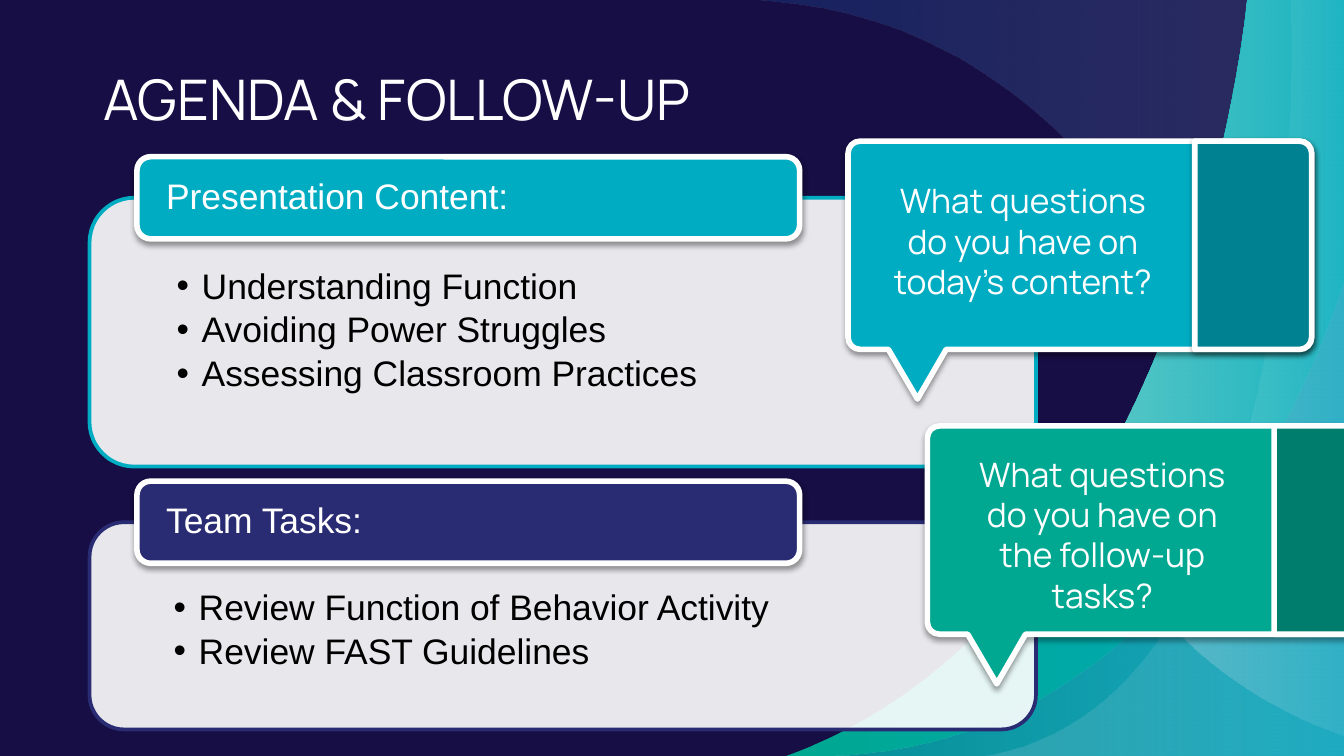
from lxml import etree
from pptx import Presentation
from pptx.dml.color import RGBColor
from pptx.enum import shapes, text
from pptx.oxml import ns
from pptx.util import Pt

NAVY = RGBColor(0x16, 0x0E, 0x44)
INK = RGBColor(0x12, 0x10, 0x2F)
INDIGO = RGBColor(0x29, 0x2C, 0x73)
TEAL = RGBColor(0x00, 0xAC, 0xC2)
DEEP = RGBColor(0x00, 0x81, 0x92)
GREEN = RGBColor(0x00, 0xA7, 0x91)
MOSS = RGBColor(0x00, 0x7D, 0x6D)
SKY = RGBColor(0x8A, 0xAF, 0xDC)
BLUE = RGBColor(0x11, 0x4C, 0xA0)
WHITE = RGBColor(0xFF, 0xFF, 0xFF)
BLACK = RGBColor(0x00, 0x00, 0x00)
WIDE, HIGH, EDGE = 720, 405, 768.2


def add(node, tag, **attrs):
    """Append a child element with the given attributes."""
    return etree.SubElement(node, ns.qn(tag), {k: str(v) for k, v in attrs.items()})


def fade(shape, *alphas):
    """Set the opacity percentages of the fill colours in order."""
    for node, alpha in zip(shape._element.spPr.iter(ns.qn("a:srgbClr")), alphas):
        add(node, "a:alpha", val=alpha * 1000)


def paint(shape, fill, line=None, width=3, alpha=100):
    """Give a shape a plain fill and an optional line."""
    shape.shadow.inherit = False
    shape.fill.solid()
    shape.fill.fore_color.rgb = fill
    if alpha < 100:
        fade(shape, alpha)
    if line is None:
        shape.line.fill.background()
    else:
        shape.line.color.rgb = line
        shape.line.width = Pt(width)


def blend(shape, stops):
    """Give a shape a left-to-right gradient of (colour, opacity) stops."""
    shape.shadow.inherit = False
    shape.line.fill.background()
    shape.fill.gradient()
    shape.fill.gradient_angle = 0
    for stop, (color, _) in zip(shape.fill.gradient_stops, stops):
        stop.color.rgb = color
    fade(shape, *(alpha for _, alpha in stops))


def lift(shape):
    """Put a soft shadow below a shape."""
    effect = shape._element.spPr.find(ns.qn("a:effectLst"))
    cast = add(effect, "a:outerShdw", blurRad=Pt(3.1), dist=Pt(1.6),
               dir=5400000, algn="t", rotWithShape=0)
    add(add(cast, "a:srgbClr", val=BLACK), "a:alpha", val=38000)


def trace(slide, steps, x=0, y=0):
    """Draw a closed outline from line (2 numbers) and curve (6 numbers) steps."""
    dots = [(Pt(x + step[-2]), Pt(y + step[-1])) for step in steps]
    pen = slide.shapes.build_freeform(*dots[0])
    pen.add_line_segments(dots[1:], close=True)
    shape = pen.convert_to_shape()
    route = next(shape._element.iter(ns.qn("a:path")))
    for node, step in zip(list(route), steps):
        if len(step) == 6:
            curve = etree.Element(ns.qn("a:cubicBezTo"))
            for a, b in zip(step[::2], step[1::2]):
                add(curve, "a:pt", x=Pt(x + a) - shape.left, y=Pt(y + b) - shape.top)
            route.replace(node, curve)
    return shape


def style(para, font, size, color, align=text.PP_ALIGN.LEFT):
    """Set the alignment and font of a paragraph."""
    para.alignment = align
    para.font.name = font
    para.font.size = Pt(size)
    para.font.color.rgb = color


def setup(frame, anchor, left=7.2, top=3.6, right=7.2, bottom=3.6):
    """Set the wrap, anchor and insets of a text frame."""
    frame.word_wrap = True
    frame.vertical_anchor = anchor
    frame.margin_left, frame.margin_top = Pt(left), Pt(top)
    frame.margin_right, frame.margin_bottom = Pt(right), Pt(bottom)


def swoosh(slide):
    """Draw the curved colour bands on the right."""
    right = [(EDGE, HIGH), (EDGE, 0)]
    bend = [(668.2, 0), (668.2, 0, 655.2, 143.3, 583.2, 262.8)]
    haze = [(BLUE, 29), (SKY, 18)]
    arc = trace(slide, [(710.6, HIGH), (710.6, HIGH, 670.3, 0, 390.2, 0),
                        (724.3, 0), (724.3, HIGH)])
    blend(arc, haze)
    shade = trace(slide, [(EDGE, 0), (EDGE, HIGH), (421.2, HIGH),
                          (638.6, 326.2, 681.8, 0, 681.8, 0)])
    paint(shade, INK, alpha=54)
    bands = [
        ([(421.2, HIGH), *right, *bend, (546.5, 323.3, 494.6, 378.7, 421.2, HIGH)],
         [(GREEN, 100), (TEAL, 100)]),
        ([(583.2, 262.8), (634.3, 396, EDGE, HIGH, EDGE, HIGH), (EDGE, 0), *bend],
         [(WHITE, 36), (WHITE, 0)]),
        ([(691.2, 0), (691.2, 0, 709.2, 378, 525.6, HIGH), *right],
         [(WHITE, 18), (WHITE, 0)]),
        ([(755.3, 0), (755.3, 0, 715, HIGH, 434.9, HIGH), *right], haze),
    ]
    for steps, stops in bands:
        blend(trace(slide, steps), stops)


def head(slide, words):
    """Place the title in front of the bands."""
    title = slide.shapes.title
    slide.shapes._spTree.append(title._element)
    title.left, title.top, title.width, title.height = map(Pt, (48.2, 27.7, 553.7, 49.7))
    title.text_frame.text = words
    setup(title.text_frame, text.MSO_ANCHOR.MIDDLE, 7.2, 7.2, 7.2, 7.2)
    style(title.text_frame.paragraphs[0], "Manrope", 30, WHITE)


def panel(slide, x, y, w, h):
    """Add a rounded rectangle."""
    kind = shapes.MSO_SHAPE.ROUNDED_RECTANGLE
    return slide.shapes.add_shape(kind, Pt(x), Pt(y), Pt(w), Pt(h))


def card(slide, y, h, color, label, items):
    """Draw a bulleted card with a label on its top edge."""
    body = panel(slide, 48, y, 507, h)
    paint(body, WHITE, color, 2, 90)
    frame = body.text_frame
    setup(frame, text.MSO_ANCHOR.TOP, 39.6, 31, 39.6, 10.8)
    frame.text = "\n".join(items)
    for para in frame.paragraphs:
        props = para._p.get_or_add_pPr()
        props.set("marL", str(Pt(13.5)))
        props.set("indent", str(Pt(-13.5)))
        add(add(props, "a:buClr"), "a:srgbClr", val=BLACK)
        add(props, "a:buFont", typeface="Arial")
        add(props, "a:buChar", char="•")
        para.line_spacing = 0.9
        para.space_after = Pt(2.8)
        style(para, "Arial", 19, BLACK)
    tab = panel(slide, 73.4, y - 22, 355, 44)
    paint(tab, color, WHITE)
    lift(tab)
    setup(tab.text_frame, text.MSO_ANCHOR.MIDDLE, 13.5, 0, 13.5, 0)
    tab.text_frame.text = label
    tab.text_frame.paragraphs[0].line_spacing = 0.9
    style(tab.text_frame.paragraphs[0], "Arial", 19, WHITE)


def bubble(slide, x, y, color, dark, words, drop, tall, raised):
    """Draw a speech bubble with a dark strip and a question."""
    w, h, r, c, cut = 248.4, 111.6, 6.5, 2.9, 185.8
    side = [(w - r, 0), (w - c, 0, w, c, w, r), (w, h - r),
            (w, h - c, w - c, h, w - r, h)]
    tail = [(52.6, h), (37.2, 138.2), (21.6, h)]
    left = [(r, h), (c, h, 0, h - c, 0, h - r), (0, r), (0, c, c, 0, r, 0)]
    base = trace(slide, side + tail + left, x, y)
    paint(base, color, WHITE)
    lift(base)
    strip = trace(slide, side + [(cut, h), (cut, 0)], x, y)
    paint(strip, dark, WHITE)
    if raised:
        lift(strip)
    box = slide.shapes.add_textbox(Pt(x + 11.7), Pt(y + drop), Pt(164), Pt(tall))
    setup(box.text_frame, text.MSO_ANCHOR.MIDDLE)
    box.text_frame.text = words
    style(box.text_frame.paragraphs[0], "Manrope", 18, WHITE, text.PP_ALIGN.CENTER)


def main():
    """Build and save the agenda slide."""
    deck = Presentation()
    deck.slide_width, deck.slide_height = Pt(WIDE), Pt(HIGH)
    slide = deck.slides.add_slide(deck.slide_layouts[5])
    slide.background.fill.solid()
    slide.background.fill.fore_color.rgb = NAVY
    swoosh(slide)
    head(slide, "AGENDA & FOLLOW-UP")
    card(slide, 106, 144, TEAL, "Presentation Content:",
         ["Understanding Function", "Avoiding Power Struggles",
          "Assessing Classroom Practices"])
    card(slide, 279.8, 111, INDIGO, "Team Tasks:",
         ["Review Function of Behavior Activity", "Review FAST Guidelines"])
    bubble(slide, 454.3, 75.6, TEAL, DEEP,
           "What questions do you have on today’s content?", 17, 72.7, True)
    bubble(slide, 496.8, 228.2, GREEN, MOSS,
           "What questions do you have on the follow-up tasks?", 10.8, 94.3, False)
    deck.save("out.pptx")


if __name__ == "__main__":
    main()
